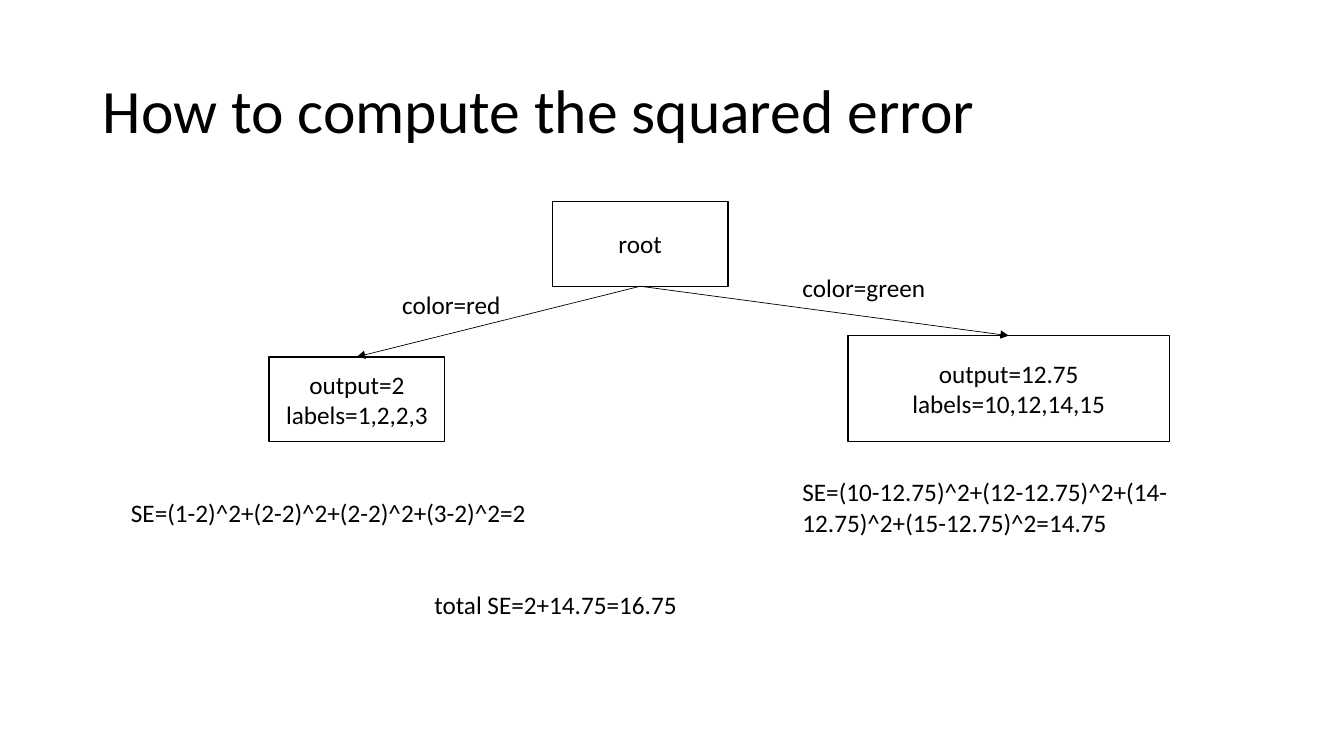
from dataclasses import dataclass

from lxml import etree
from pptx import Presentation
from pptx.dml.color import RGBColor
from pptx.enum.shapes import MSO_CONNECTOR, MSO_SHAPE
from pptx.enum.text import MSO_ANCHOR, PP_ALIGN
from pptx.oxml.ns import qn
from pptx.util import Inches, Pt

BLANK_LAYOUT = 6
RECTANGLE = MSO_SHAPE.RECTANGLE
STRAIGHT = MSO_CONNECTOR.STRAIGHT
LEFT, CENTER = PP_ALIGN.LEFT, PP_ALIGN.CENTER
TOP, MIDDLE = MSO_ANCHOR.TOP, MSO_ANCHOR.MIDDLE
TOP_SIDE, BOTTOM_SIDE = 0, 2


@dataclass(frozen=True)
class Theme:
    font: str = "Calibri"
    ink: RGBColor = RGBColor(0, 0, 0)
    paper: RGBColor = RGBColor(255, 255, 255)
    title_size: int = 44
    body_size: int = 18
    node_line: float = 1
    arrow_line: float = 0.5


THEME = Theme()


@dataclass(frozen=True)
class Box:
    """A rectangle in inches."""
    left: float
    top: float
    width: float
    height: float

    def inside(self, left, top, width, height):
        """Return a box whose position is relative to this one."""
        return Box(self.left + left, self.top + top, width, height)

    def lengths(self):
        return [Inches(value) for value in (self.left, self.top, self.width, self.height)]


def write_lines(shape, lines, size=THEME.body_size, align=LEFT, anchor=TOP, spacing=None):
    frame = shape.text_frame
    frame.word_wrap = True
    frame.vertical_anchor = anchor
    frame.text = "\n".join(lines)
    for para in frame.paragraphs:
        para.alignment = align
        para.line_spacing = spacing
        para.font.name = THEME.font
        para.font.size = Pt(size)
        para.font.color.rgb = THEME.ink


def add_label(page, box, text, **style):
    write_lines(page.shapes.add_textbox(*box.lengths()), [text], **style)


def add_node(page, box, *lines):
    node = page.shapes.add_shape(RECTANGLE, *box.lengths())
    node.shadow.inherit = False
    node.fill.solid()
    node.fill.fore_color.rgb = THEME.paper
    node.line.color.rgb = THEME.ink
    node.line.width = Pt(THEME.node_line)
    write_lines(node, lines, align=CENTER, anchor=MIDDLE)
    return node


def add_branch(page, parent, child):
    """Draw an arrow from the parent's bottom to the child's top."""
    branch = page.shapes.add_connector(STRAIGHT, 0, 0, 0, 0)
    branch.begin_connect(parent, BOTTOM_SIDE)
    branch.end_connect(child, TOP_SIDE)
    branch.line.color.rgb = THEME.ink
    branch.line.width = Pt(THEME.arrow_line)
    etree.SubElement(branch.line._get_or_add_ln(), qn("a:tailEnd"), type="triangle")
    etree.SubElement(branch._element.spPr, qn("a:effectLst"))


def add_title(page, box):
    add_label(page, box, "How to compute the squared error",
              size=THEME.title_size, anchor=MIDDLE, spacing=0.9)


def add_tree(page, box):
    root = add_node(page, box.inside(2.81, 0, 1.74, 0.84), "root")
    green = add_node(page, box.inside(5.74, 1.33, 3.19, 1.05),
                     "output=12.75", "labels=10,12,14,15")
    red = add_node(page, box.inside(0, 1.54, 1.74, 0.84), "output=2", "labels=1,2,2,3")
    for leaf in (red, green):
        add_branch(page, root, leaf)
    add_label(page, box.inside(1.22, 0.82, 1.33, 0.4), "color=red")
    add_label(page, box.inside(5.19, 0.65, 1.71, 0.4), "color=green")


def add_errors(page, box):
    """Write the squared error of each leaf and their total."""
    errors = [
        (0, 0.2, 0.4, "SE=(1-2)^2+(2-2)^2+(2-2)^2+(3-2)^2=2"),
        (6.66, 0, 0.71, "SE=(10-12.75)^2+(12-12.75)^2+(14-12.75)^2+(15-12.75)^2=14.75"),
        (3.01, 1.12, 0.4, "total SE=2+14.75=16.75"),
    ]
    for left, top, height, text in errors:
        add_label(page, box.inside(left, top, 4.28, height), text)


def main():
    deck = Presentation()
    deck.slide_width, deck.slide_height = Inches(13.33), Inches(7.5)
    page = deck.slides.add_slide(deck.slide_layouts[BLANK_LAYOUT])
    add_title(page, Box(0.92, 0.4, 11.5, 1.45))
    add_tree(page, Box(2.67, 2, 8.93, 2.38))
    add_errors(page, Box(1.2, 4.68, 10.94, 1.52))
    deck.save("out.pptx")


if __name__ == "__main__":
    main()
